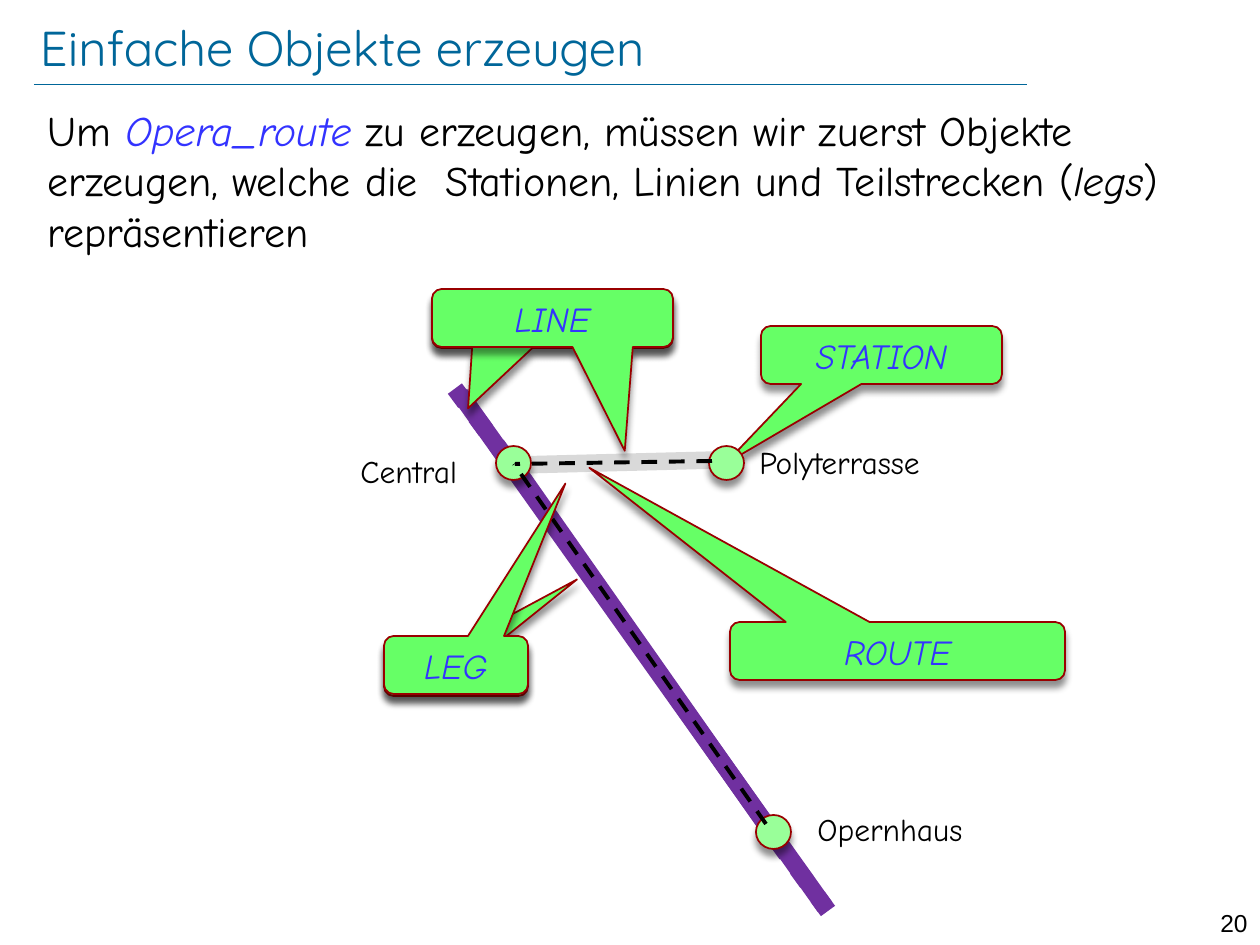
from dataclasses import dataclass
from typing import Any, Optional

import lxml.etree
import pptx
import pptx.dml.color
import pptx.enum.dml
import pptx.enum.shapes
import pptx.enum.text
import pptx.oxml.ns
import pptx.util

PX_PER_INCH = 126
CALLOUT_HEIGHT = 58
STATION_SIZE = (35, 34)
COLORS = {
    "title": "006699", "text": "000000", "class": "3333FF",
    "callout": "66FF66", "station": "99FF99", "outline": "990000",
    "tram": "7030A0", "funicular": "D9D9D9",
}
DASH = pptx.enum.dml.MSO_LINE.DASH
DOT = pptx.enum.dml.MSO_LINE.ROUND_DOT
ALIGN = pptx.enum.text.PP_ALIGN
ANCHOR = pptx.enum.text.MSO_ANCHOR
AUTO_SIZE = pptx.enum.text.MSO_AUTO_SIZE
SHAPE = pptx.enum.shapes.MSO_SHAPE
NO_MARGINS = {"margin_left": 0, "margin_right": 0, "margin_top": 0, "margin_bottom": 0}
SIDE_MARGINS_OFF = {"margin_left": 0, "margin_right": 0}


@dataclass
class Track:
    start: tuple[int, int]
    end: tuple[int, int]
    color: str
    width: float
    dash: Optional[Any] = None


@dataclass
class Label:
    text: str
    box: tuple[int, int, int, int]


@dataclass
class Callout:
    text: str
    left: int
    top: int
    width: int
    tip: tuple[float, float]


TRACKS = [
    Track((34, 84), (1027, 84), "title", 0.25),
    Track((825, 907), (460, 394), "tram", 10),
    Track((828, 911), (772, 834), "tram", 10, DOT),
    Track((507, 459), (450, 382), "tram", 10, DOT),
    Track((716, 460), (519, 465), "funicular", 10),
    Track((769, 829), (517, 470), "tram", 10),
]
ROUTE_LEGS = [
    Track((712, 461), (515, 464), "text", 2.25, DASH),
    Track((766, 824), (514, 464), "text", 2.25, DASH),
]
LABELS = [
    Label("Polyterrasse", (747, 437, 212, 50)),
    Label("Opernhaus", (805, 804, 184, 50)),
    Label("Central", (348, 446, 134, 50)),
]
LOWER_CALLOUTS = [
    Callout("STATION", 761, 326, 241, (-0.65, 1.88)),
    Callout("LINE", 432, 290, 241, (-0.35, 1.54)),
    Callout("LEG", 384, 638, 144, (0.84, -1.51)),
    Callout("ROUTE", 730, 622, 335, (-0.92, -3.16)),
]
UPPER_CALLOUTS = [
    Callout("LINE", 432, 289, 241, (0.3, 2.29)),
    Callout("LEG", 384, 636, 144, (0.76, -3.13)),
]
STATIONS = [(709, 446), (496, 446), (756, 815)]
INTRO = [
    ("Um ", "text", False),
    ("Opera_route", "class", True),
    (" zu erzeugen, müssen wir zuerst Objekte erzeugen, welche die  Stationen, "
     "Linien und Teilstrecken (", "text", False),
    ("legs", "text", True),
    (") repräsentieren", "text", False),
]


def px(length: int) -> int:
    return round(length * pptx.util.Inches(1) / PX_PER_INCH)


def rgb(name: str) -> pptx.dml.color.RGBColor:
    return pptx.dml.color.RGBColor.from_string(COLORS[name])


def apply(target: Any, values: dict[str, Any]) -> None:
    for attribute, value in values.items():
        setattr(target, attribute, value)


def place(shape: Any, box: tuple[int, int, int, int]) -> None:
    apply(shape, dict(zip(("left", "top", "width", "height"), map(px, box))))


def add_run(paragraph: Any, text: str, size: int, color: str = "text",
            name: str = "Comic Neue", italic: bool = False) -> None:
    run = paragraph.add_run()
    run.text = text
    apply(run.font, {"name": name, "size": pptx.util.Pt(size), "italic": italic})
    run.font.color.rgb = rgb(color)


def add_track(slide: Any, track: Track) -> None:
    connector = slide.shapes.add_connector(
        pptx.enum.shapes.MSO_CONNECTOR.STRAIGHT,
        *map(px, track.start + track.end))
    apply(connector.line, {"width": pptx.util.Pt(track.width), "dash_style": track.dash})
    connector.line.color.rgb = rgb(track.color)
    lxml.etree.SubElement(connector._element.spPr, pptx.oxml.ns.qn("a:effectLst"))


def add_shadowed(slide: Any, kind: Any, box: tuple[int, int, int, int], fill: str) -> Any:
    shape = slide.shapes.add_shape(kind, *map(px, box))
    shape.fill.solid()
    shape.fill.fore_color.rgb = rgb(fill)
    shape.line.color.rgb = rgb("outline")
    shape.line.width = pptx.util.Pt(1)
    shape.shadow.inherit = False
    qn = pptx.oxml.ns.qn
    effects = shape._element.spPr.find(qn("a:effectLst"))
    offset = str(pptx.util.Pt(4))
    shadow = lxml.etree.SubElement(
        effects, qn("a:outerShdw"), blurRad=offset, dist=offset,
        dir="5400000", algn="t", rotWithShape="0")
    shade = lxml.etree.SubElement(shadow, qn("a:srgbClr"), val=COLORS["text"])
    lxml.etree.SubElement(shade, qn("a:alpha"), val="43000")
    return shape


def add_callout(slide: Any, callout: Callout) -> None:
    shape = add_shadowed(
        slide, SHAPE.ROUNDED_RECTANGULAR_CALLOUT,
        (callout.left, callout.top, callout.width, CALLOUT_HEIGHT), "callout")
    for index, value in enumerate(callout.tip):
        shape.adjustments[index] = value
    apply(shape.text_frame, {"vertical_anchor": ANCHOR.MIDDLE, **SIDE_MARGINS_OFF})
    paragraph = shape.text_frame.paragraphs[0]
    paragraph.alignment = ALIGN.CENTER
    add_run(paragraph, callout.text, 20, "class", italic=True)


def add_label(slide: Any, label: Label) -> None:
    frame = slide.shapes.add_textbox(*map(px, label.box)).text_frame
    apply(frame, {"word_wrap": False, "auto_size": AUTO_SIZE.SHAPE_TO_FIT_TEXT})
    add_run(frame.paragraphs[0], label.text, 18)


def fill_title(title: Any) -> None:
    place(title, (40, 18, 1038, 57))
    apply(title.text_frame, {"vertical_anchor": ANCHOR.MIDDLE, "word_wrap": True,
                             "auto_size": AUTO_SIZE.NONE, **NO_MARGINS})
    paragraph = title.text_frame.paragraphs[0]
    paragraph.alignment = ALIGN.LEFT
    add_run(paragraph, "Einfache Objekte erzeugen", 28, "title", "Quicksand")


def fill_intro(body: Any) -> None:
    place(body, (35, 98, 1201, 198))
    apply(body.text_frame, {"word_wrap": True, "auto_size": AUTO_SIZE.NONE})
    paragraph = body.text_frame.paragraphs[0]
    paragraph.space_before = pptx.util.Pt(0)
    properties = paragraph._p.get_or_add_pPr()
    properties.set("marL", "0")
    properties.set("indent", "0")
    lxml.etree.SubElement(properties, pptx.oxml.ns.qn("a:buNone"))
    for text, color, italic in INTRO:
        add_run(paragraph, text, 24, color, italic=italic)


def add_page_number(slide: Any) -> None:
    frame = slide.shapes.add_textbox(*map(px, (1191, 902, 69, 30))).text_frame
    frame.word_wrap = True
    paragraph = frame.paragraphs[0]
    paragraph.alignment = ALIGN.RIGHT
    add_run(paragraph, "20", 14, name="Arial")


def main() -> None:
    presentation = pptx.Presentation()
    apply(presentation, {"slide_width": px(1260), "slide_height": px(945)})
    slide = presentation.slides.add_slide(presentation.slide_layouts[1])
    fill_title(slide.shapes.title)
    fill_intro(slide.placeholders[1])
    add_page_number(slide)
    for track in TRACKS:
        add_track(slide, track)
    for label in LABELS:
        add_label(slide, label)
    for callout in LOWER_CALLOUTS:
        add_callout(slide, callout)
    for position in STATIONS:
        add_shadowed(slide, SHAPE.OVAL, position + STATION_SIZE, "station")
    for leg in ROUTE_LEGS:
        add_track(slide, leg)
    for callout in UPPER_CALLOUTS:
        add_callout(slide, callout)
    presentation.save("out.pptx")


if __name__ == "__main__":
    main()
